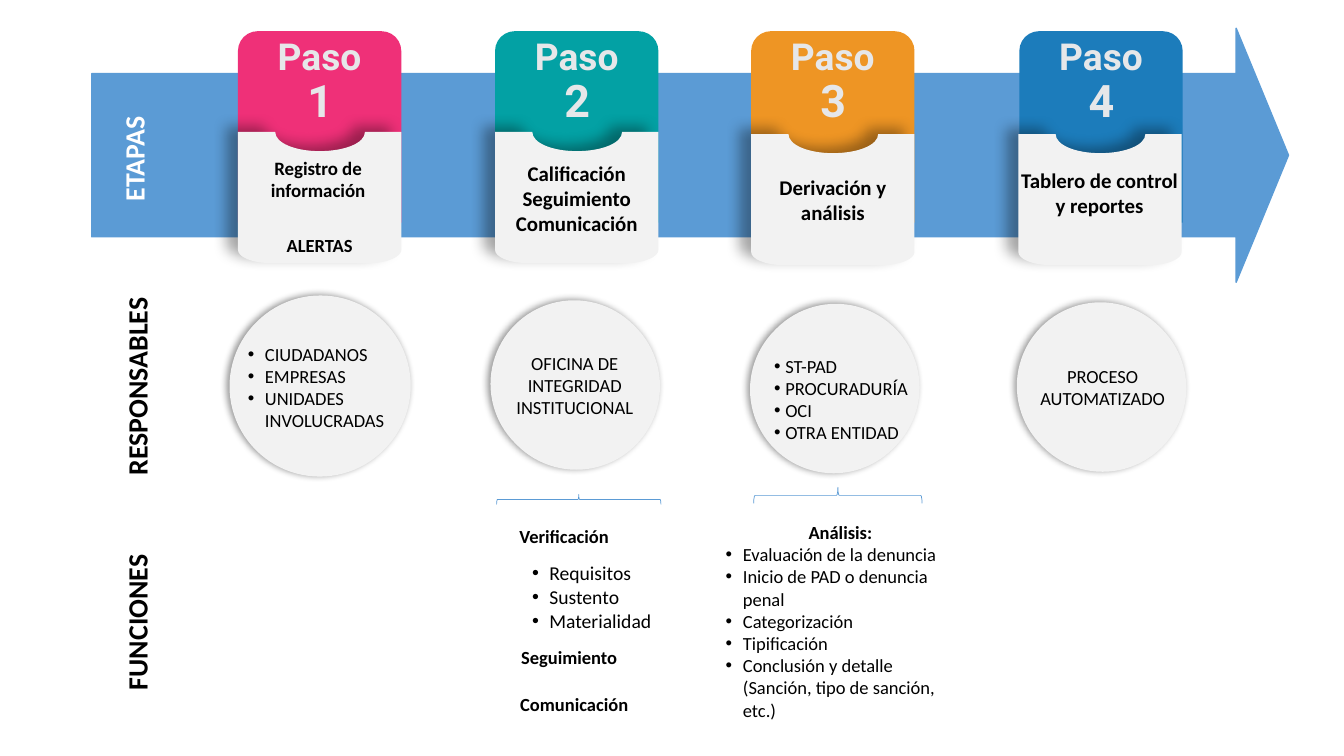
from lxml.etree import SubElement
from pptx import Presentation
from pptx.dml.color import RGBColor
from pptx.enum.shapes import MSO_SHAPE
from pptx.enum.text import PP_ALIGN
from pptx.oxml.ns import qn
from pptx.util import Inches, Pt

BLUE = RGBColor(0x5B, 0x9B, 0xD5)
PINK = RGBColor(0xEF, 0x30, 0x78)
TEAL = RGBColor(0x03, 0xA1, 0xA4)
ORANGE = RGBColor(0xEE, 0x95, 0x24)
NAVY = RGBColor(0x1C, 0x7C, 0xBB)
PANEL = RGBColor(0xF2, 0xF2, 0xF2)
LABEL = RGBColor(0xE6, 0xE7, 0xE9)
WHITE = RGBColor(0xFF, 0xFF, 0xFF)
BLACK = RGBColor(0, 0, 0)

# Content: boxes are (left, top, width, height) in inches
ROWS = [
    ("ETAPAS ", (1.11, -0.27, 0.54, 3.63), WHITE),
    ("RESPONSABLES", (1.14, 2.46, 0.54, 2.75), BLACK),
    ("FUNCIONES", (1.14, 5.31, 0.54, 1.73), BLACK),
]
# Card left, panel left and top, colour, circle box
STEPS = [
    (2.36, (2.36, 1.31), PINK, (2.28, 2.93, 1.79, 1.8)),
    (4.91, (4.91, 1.31), TEAL, (4.86, 2.99, 1.69, 1.66)),
    (7.45, (7.45, 1.33), ORANGE, (7.45, 3.01, 1.66, 1.69)),
    (10.11, (10.1, 1.33), NAVY, (10.08, 3.01, 1.69, 1.66)),
]
# Centred texts: lines, box, size, bold
CENTRED = [
    (["Registro de información"], (2.23, 1.5, 1.85, 0.56), 13.5, True),
    (["ALERTAS"], (2.36, 2.27, 1.62, 0.32), 13.2, True),
    (["Calificación", "Seguimiento", "Comunicación"], (4.85, 1.54, 1.74, 0.85), 14.9, True),
    (["Derivación y análisis"], (7.45, 1.68, 1.62, 0.6), 14.9, True),
    (["Tablero de control y reportes"], (9.98, 1.61, 1.85, 0.85), 14.9, True),
    (["OFICINA DE", "INTEGRIDAD INSTITUCIONAL"], (4.74, 3.44, 1.92, 0.77), 13.2, False),
    (["PROCESO AUTOMATIZADO"], (9.89, 3.57, 2.09, 0.55), 13.2, False),
    (["Verificación"], (4.86, 5.16, 1.47, 0.32), 13.2, True),
    (["Seguimiento"], (4.91, 6.36, 1.47, 0.32), 13.2, True),
    (["Comunicación"], (4.85, 6.83, 1.69, 0.32), 13.2, True),
]
# Lists: heading, items, box, size, left margin, hanging indent
LISTS = [
    (None, ["CIUDADANOS", "EMPRESAS", "UNIDADES INVOLUCRADAS"],
     (2.36, 3.35, 1.8, 0.99), 13.2, 0.17, 0.17),
    (None, ["ST-PAD", "PROCURADURÍA", "OCI", "OTRA ENTIDAD"],
     (7.38, 3.47, 1.92, 0.99), 13.2, 0.31, 0.11),
    (None, ["Requisitos", "Sustento", "Materialidad"],
     (5.18, 5.52, 1.77, 0.81), 14, 0.17, 0.17),
    ("Análisis:", ["Evaluación de la denuncia", "Inicio de PAD o denuncia penal",
                   "Categorización", "Tipificación",
                   "Conclusión y detalle (Sanción, tipo de sanción, etc.)"],
     (7.1, 5.12, 2.47, 2.11), 13.2, 0.17, 0.17),
]
BRACES = [(5.69, 4.14, 0.1, 1.63), (8.23, 4.08, 0.16, 1.67)]

CARD_WIDTH = 1.62
# Panel outline from its top left corner: one point is a line, three a curve
PANEL_SEGMENTS = [
    [(0.37, 0)],
    [(0.37, 0.11), (0.57, 0.19), (0.81, 0.19)],
    [(1.06, 0.19), (1.26, 0.11), (1.26, 0)],
    [(1.62, 0)],
    [(1.62, 1.17)],
    [(1.62, 1.24), (1.48, 1.3), (1.3, 1.3)],
    [(0.32, 1.3)],
    [(0.14, 1.3), (0, 1.24), (0, 1.17)],
]

presentation = Presentation()
presentation.slide_width = Inches(13.33)
presentation.slide_height = Inches(7.5)
slide = presentation.slides.add_slide(presentation.slide_layouts[6])
shapes = slide.shapes


def paint(shape, fill):
    shape.shadow.inherit = False
    shape.fill.solid()
    shape.fill.fore_color.rgb = fill
    shape.line.fill.background()


def add_filled(kind, box, fill):
    shape = shapes.add_shape(kind, *map(Inches, box))
    paint(shape, fill)
    return shape


def add_shadow(shape, blur, distance, direction, alpha):
    effects = shape.element.spPr.find(qn("a:effectLst"))
    shadow = SubElement(effects, qn("a:outerShdw"), blurRad=str(Pt(blur)),
                        dist=str(Pt(distance)), dir=str(direction * 60000),
                        rotWithShape="0")
    color = SubElement(shadow, qn("a:srgbClr"), val="000000")
    SubElement(color, qn("a:alpha"), val=str(alpha * 1000))


def add_text(lines, box, size, bold=False, color=BLACK, font="Calibri"):
    shape = shapes.add_textbox(*map(Inches, box))
    frame = shape.text_frame
    frame.word_wrap = True
    frame.text = "\n".join(lines)
    for paragraph in frame.paragraphs:
        paragraph.alignment = PP_ALIGN.CENTER
        paragraph.font.size = Pt(size)
        paragraph.font.name = font
        paragraph.font.bold = bold
        paragraph.font.color.rgb = color
    return shape


def add_bullet(paragraph, margin, hanging):
    paragraph.alignment = PP_ALIGN.LEFT
    properties = paragraph._p.get_or_add_pPr()
    properties.set("marL", str(Inches(margin)))
    properties.set("indent", str(-Inches(hanging)))
    bullet_font = properties.makeelement(qn("a:buFont"), {"typeface": "Arial"})
    bullet = properties.makeelement(qn("a:buChar"), {"char": "•"})
    properties.insert(0, bullet_font)
    properties.insert(1, bullet)


def add_panel(left, top):
    points = [(Inches(left + x), Inches(top + y))
              for segment in PANEL_SEGMENTS for x, y in segment]
    builder = shapes.build_freeform(Inches(left), Inches(top))
    builder.add_line_segments(points)
    panel = builder.convert_to_shape()
    # Join each three-point segment into one curve
    lines = iter(list(panel.element.iter(qn("a:lnTo"))))
    for segment in PANEL_SEGMENTS:
        first = next(lines)
        if len(segment) == 3:
            curve = first.makeelement(qn("a:cubicBezTo"), {})
            first.addprevious(curve)
            for line in (first, next(lines), next(lines)):
                curve.append(line[0])
                line.getparent().remove(line)
    paint(panel, PANEL)
    add_shadow(panel, 10, 9, 205, 34)


# Background arrow
arrow = add_filled(MSO_SHAPE.RIGHT_ARROW, (0.91, 0.28, 11.87, 2.52), BLUE)
arrow.adjustments[0], arrow.adjustments[1] = 0.642, 0.206
arrow.line.color.rgb = BLUE
arrow.line.width = Pt(1)

# Step cards and circles
for number, (left, panel_corner, color, circle_box) in enumerate(STEPS, 1):
    card = add_filled(MSO_SHAPE.ROUND_2_SAME_RECTANGLE, (left, 0.31, CARD_WIDTH, 1.9), color)
    card.adjustments[0] = 0.121
    add_text(["Paso"], (left - 0.11, 0.28, 1.84, 0.55), 26.5, True, LABEL, "Roboto")
    add_text([str(number)], (left + 0.36, 0.67, 0.91, 0.64), 32, True, LABEL, "Roboto")
    add_panel(*panel_corner)
    circle = add_filled(MSO_SHAPE.ROUNDED_RECTANGLE, circle_box, PANEL)
    circle.adjustments[0] = 0.5
    circle.rotation = 45
    add_shadow(circle, 5, 2, 200, 40)

# Row labels
for label, box, color in ROWS:
    shape = add_text([label], box, 19.9, True, color)
    shape.element.txBody.bodyPr.set("vert", "vert270")

# Texts and lists
for lines, box, size, bold in CENTRED:
    add_text(lines, box, size, bold)

for heading, items, box, size, margin, hanging in LISTS:
    lines = [heading] + items if heading else items
    paragraphs = add_text(lines, box, size).text_frame.paragraphs
    if heading:
        paragraphs[0].font.bold = True
    for paragraph in paragraphs[len(lines) - len(items):]:
        add_bullet(paragraph, margin, hanging)

# Braces above the functions
for box in BRACES:
    brace = shapes.add_shape(MSO_SHAPE.LEFT_BRACE, *map(Inches, box))
    brace.shadow.inherit = False
    brace.fill.background()
    brace.line.color.rgb = BLUE
    brace.line.width = Pt(0.5)
    brace.rotation = 90

presentation.save("out.pptx")
